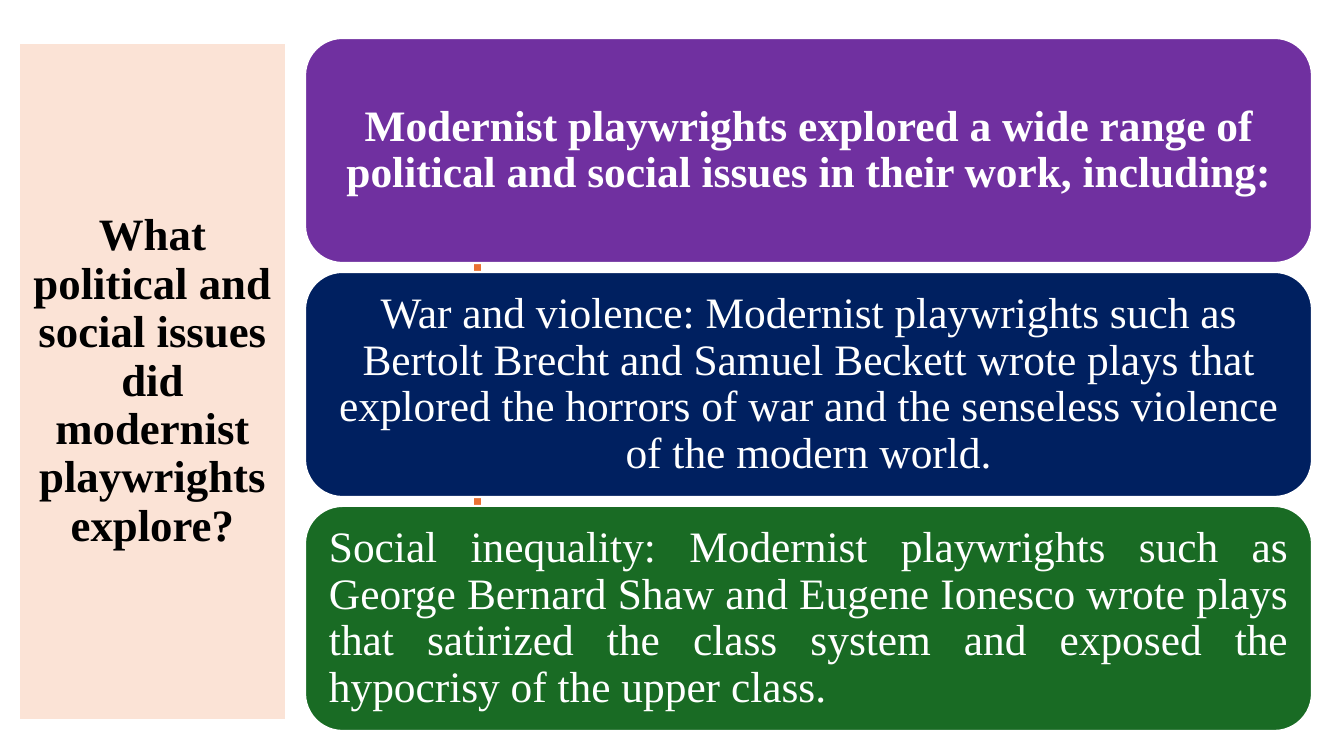
from lxml.etree import SubElement
from pptx import Presentation
from pptx.dml.color import RGBColor
from pptx.enum.shapes import MSO_CONNECTOR, MSO_SHAPE
from pptx.enum.text import MSO_ANCHOR, MSO_AUTO_SIZE, PP_ALIGN
from pptx.oxml.ns import qn
from pptx.util import Pt

SCALE = 12192000 / 1344
FONT = "Times New Roman"
TITLE = "What political and social issues did modernist playwrights explore?"
CARDS = [
    ("Modernist playwrights explored a wide range of political and social "
     "issues in their work, including:", "7030A0", PP_ALIGN.CENTER, True),
    ("War and violence: Modernist playwrights such as Bertolt Brecht and "
     "Samuel Beckett wrote plays that explored the horrors of war and the "
     "senseless violence of the modern world.",
     "002060", PP_ALIGN.CENTER, False),
    ("Social inequality: Modernist playwrights such as George Bernard Shaw "
     "and Eugene Ionesco wrote plays that satirized the class system and "
     "exposed the hypocrisy of the upper class.",
     "196B24", PP_ALIGN.JUSTIFY, False),
]
CARD_TOP, CARD_STEP = 38, 234


def px(n):
    return round(n * SCALE)


def paint(form, color):
    """Set a solid fill or line colour."""
    form.solid()
    form.fore_color.rgb = RGBColor.from_string(color)


def write(shape, text, size, color, align, bold, inset):
    frame = shape.text_frame
    frame.text = text
    frame.word_wrap = True
    frame.auto_size = MSO_AUTO_SIZE.NONE
    frame.vertical_anchor = MSO_ANCHOR.MIDDLE
    frame.margin_left = frame.margin_right = px(inset)
    frame.margin_top = frame.margin_bottom = px(inset)
    para = frame.paragraphs[0]
    para.alignment = align
    para.line_spacing = 0.9
    font = para.font
    font.name, font.size, font.bold = FONT, Pt(size), bold
    font.color.rgb = RGBColor.from_string(color)


def add_title(slide):
    title = slide.shapes.title
    title.left, title.top = px(20), px(44)
    title.width, title.height = px(265), px(675)
    paint(title.fill, "FBE3D6")
    write(title, TITLE, 32, "000000", PP_ALIGN.CENTER, True, 10)


def add_spine(slide):
    """Draw the upright line that shows between the cards."""
    spine = slide.shapes.add_connector(
        MSO_CONNECTOR.STRAIGHT, px(478), px(85), px(478), px(681))
    paint(spine.line.fill, "E97132")
    spine.line.width = Pt(5)
    SubElement(spine._element.spPr, qn("a:effectLst"))


def add_card(slide, top, text, color, align, bold):
    card = slide.shapes.add_shape(
        MSO_SHAPE.ROUNDED_RECTANGLE, px(305), px(top), px(1007), px(225))
    card.shadow.inherit = False
    paint(card.fill, color)
    paint(card.line.fill, "FFFFFF")
    card.line.width = Pt(1.5)
    write(card, text, 31, "FFFFFF", align, bold, 13)


def main():
    deck = Presentation()
    deck.slide_width, deck.slide_height = px(1344), px(756)
    slide = deck.slides.add_slide(deck.slide_layouts[5])
    add_title(slide)
    add_spine(slide)
    for i, card in enumerate(CARDS):
        add_card(slide, CARD_TOP + i * CARD_STEP, *card)
    deck.save("out.pptx")


if __name__ == "__main__":
    main()
